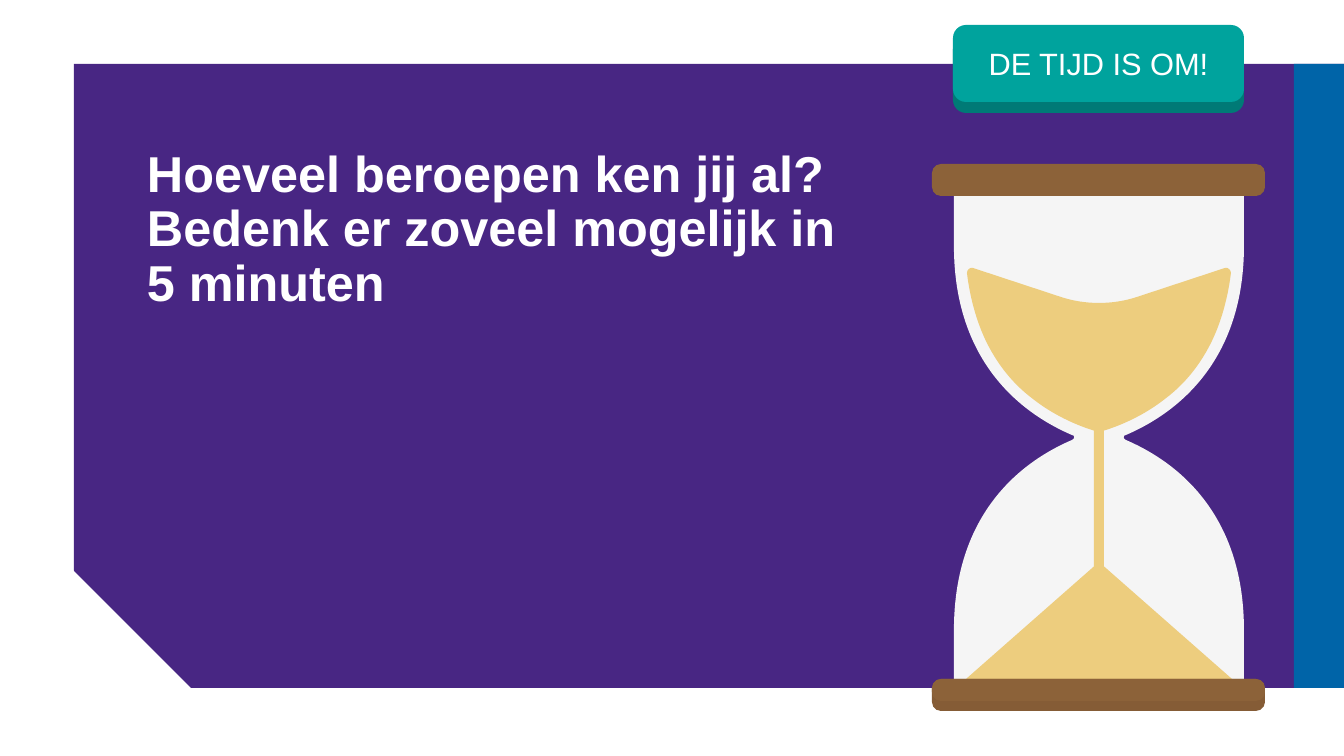
"""Build the hourglass slide with its question and button."""
from dataclasses import dataclass
from pptx import Presentation
from pptx.dml.color import RGBColor
from pptx.enum.shapes import MSO_SHAPE
from pptx.enum.text import MSO_ANCHOR, PP_ALIGN
from pptx.oxml.ns import qn
from pptx.util import Pt

PX = 914400 / 100.8
MID = 1099


@dataclass(frozen=True)
class Theme:
    font: str = "Arial"
    title: int = 36
    label: int = 22
    white: str = "FFFFFF"
    purple: str = "482683"
    blue: str = "0064A8"
    glass: str = "F5F5F5"
    wood: str = "8C6239"
    shade: str = "855C36"
    sand: str = "EDCD7E"
    teal: str = "00A39D"
    edge: str = "007A76"


def paint(shape, color):
    shape.shadow.inherit = False
    shape.fill.solid()
    shape.fill.fore_color.rgb = RGBColor.from_string(color)
    shape.line.fill.background()


def write(shape, text, size, bold=False, align=PP_ALIGN.LEFT,
          anchor=MSO_ANCHOR.MIDDLE, space=1.0):
    frame = shape.text_frame
    frame.word_wrap = True
    frame.vertical_anchor = anchor
    line = frame.paragraphs[0]
    line.text = text
    line.alignment = align
    line.line_spacing = space
    for run in line.runs:
        run.font.name = theme.font
        run.font.size = Pt(size)
        run.font.bold = bold
        run.font.color.rgb = RGBColor.from_string(theme.white)


theme = Theme()
deck = Presentation()
deck.slide_width, deck.slide_height = round(1344 * PX), round(756 * PX)
shapes = deck.slides.add_slide(deck.slide_layouts[6]).shapes

RECT, ROUND = MSO_SHAPE.RECTANGLE, MSO_SHAPE.ROUNDED_RECTANGLE
panels = [
    (RECT, 74, 64, 1272, 624, 0, theme.purple),
    (MSO_SHAPE.RIGHT_TRIANGLE, 72, 569, 120, 120, 0, theme.white),
    (RECT, 1294, 64, 53, 624, 0, theme.blue),
]
front = [
    (ROUND, 932, 164, 333, 32, 9, theme.wood),
    (ROUND, 932, 679, 333, 32, 9, theme.shade),
    (ROUND, 932, 679, 333, 22, 9, theme.wood),
    (RECT, 1094, 429, 10, 249, 0, theme.sand),
    (ROUND, 953, 36, 291, 77, 13, theme.edge),
    (ROUND, 953, 25, 291, 77, 13, theme.teal),
]

# Each left half is a start point, then lines (one point) or curves (three).
halves = [
    (theme.glass, (954, 196), [
        [(954, 246)],
        [(954, 369), (1030, 417), (1072, 435)],
        [(1075, 435), (1075, 439), (1072, 440)],
        [(1030, 458), (954, 506), (954, 630)],
        [(954, 679)]]),
    (theme.sand, (MID, 303), [
        [(1086, 303), (1073, 301), (1061, 297)],
        [(973, 268)],
        [(970, 267), (967, 270), (967, 273)],
        [(970, 298), (977, 323), (987, 343)],
        [(998, 365), (1013, 384), (1033, 399)],
        [(1061, 421), (1091, 430), (MID, 432)]]),
    (theme.sand, (MID, 562), [[(966, 679)]]),
]

for layer in (panels, halves, front):
    for item in layer:
        if layer is halves:
            color, start, parts = item
            left = [start] + [dot for part in parts for dot in part]
            right = [(2 * MID - x, y) for x, y in reversed(left)]
            dots = [(round(x * PX), round(y * PX)) for x, y in left + right]
            pen = shapes.build_freeform(*dots[0])
            pen.add_line_segments(dots[1:], close=True)
            shape = pen.convert_to_shape()
            sizes = [len(part) for part in parts]
            lines = iter(list(shape._element.iter(qn("a:lnTo"))))
            for size in sizes + [1] + sizes[::-1]:
                first = next(lines)
                if size == 3:
                    first.tag = qn("a:cubicBezTo")
                    for more in (next(lines), next(lines)):
                        first.append(more[0])
                        more.getparent().remove(more)
        else:
            kind, x, y, w, h, curve, color = item
            shape = shapes.add_shape(kind, *(round(n * PX) for n in (x, y, w, h)))
            if curve:
                shape.adjustments[0] = curve / h
        paint(shape, color)

write(shape, "DE TIJD IS OM!", theme.label, align=PP_ALIGN.CENTER)
title = shapes.add_textbox(*(round(n * PX) for n in (137, 239, 733, 78)))
write(title, "Hoeveel beroepen ken jij al? \vBedenk er zoveel mogelijk in 5 minuten",
      theme.title, bold=True, anchor=MSO_ANCHOR.BOTTOM, space=0.9)

deck.save("out.pptx")
